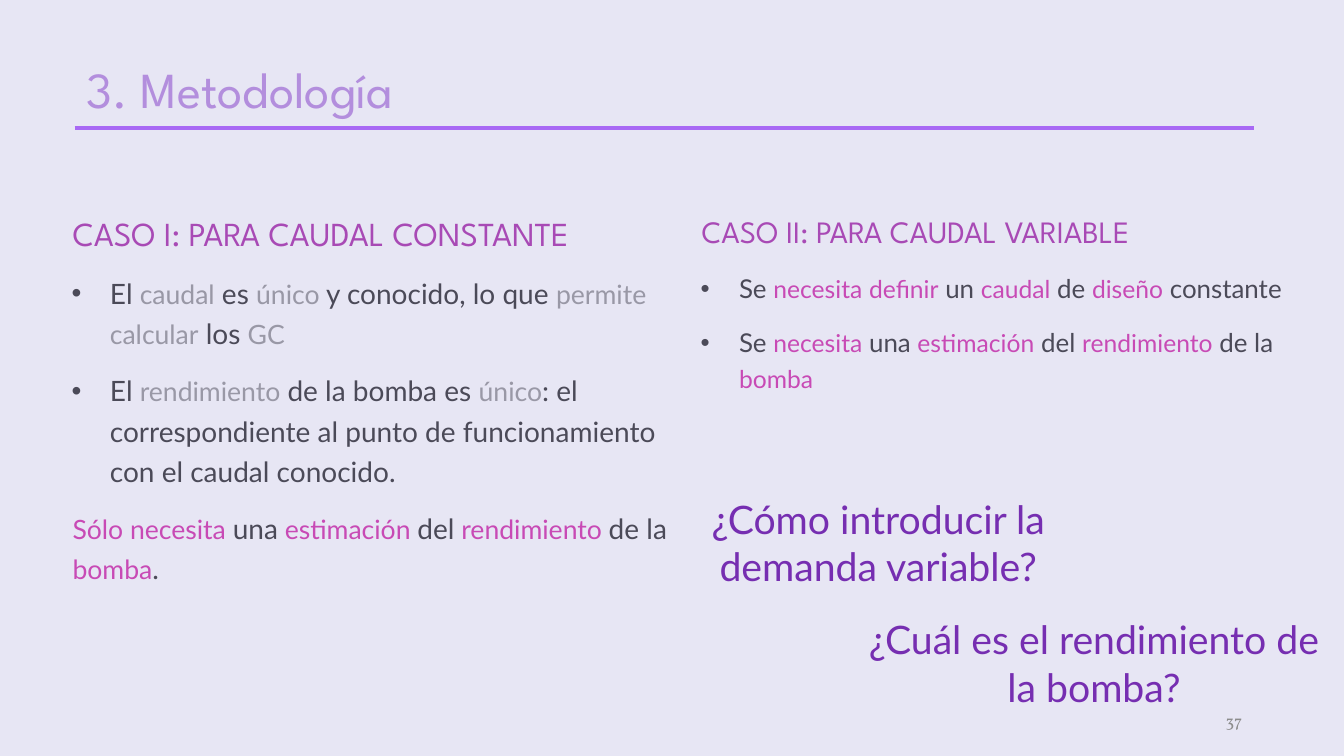
from lxml import etree
from pptx import Presentation
from pptx import util as u
from pptx.dml.color import RGBColor
from pptx.enum import shapes, text
from pptx.oxml.ns import qn

COLORS = {
    "title": "AA70DA", "heading": "990099", "text": "000000",
    "muted": "808080", "accent": "CC0099", "rule": "9933FF",
    "veil": "C2BFE3", "question": "762EB1", "number": "8C8C8C",
}
SANS, DISPLAY, SERIF = "Lato", "League Spartan", "Vollkorn"


class SlideBuilder:
    def __init__(self, prs):
        self.slide = prs.slides.add_slide(prs.slide_layouts[3])

    def color(self, name):
        return RGBColor.from_string(COLORS[name])

    def place(self, sp, box):
        sp.left, sp.top, sp.width, sp.height = map(u.Inches, box)

    def style(self, r, font, size, color):
        r.font.name = font
        r.font.size = u.Pt(size)
        r.font.color.rgb = self.color(color)

    def title(self, words, box):
        sp = self.slide.shapes.title
        self.place(sp, box)
        tf = sp.text_frame
        tf.text = words
        tf.auto_size = text.MSO_AUTO_SIZE.NONE
        tf.vertical_anchor = text.MSO_ANCHOR.MIDDLE
        p = tf.paragraphs[0]
        p.alignment = text.PP_ALIGN.LEFT
        p.line_spacing = 0.9
        self.style(p.runs[0], DISPLAY, 36, "title")

    def indent(self, p, bullet):
        pPr = p._p.get_or_add_pPr()
        pPr.set("marL", str(u.Inches(0.47 if bullet else 0.1)))
        pPr.set("indent", str(u.Inches(-0.38 if bullet else 0)))
        bu = etree.SubElement(pPr, qn("a:buChar" if bullet else "a:buNone"))
        if bullet:
            bu.set("char", "•")

    def case(self, idx, box, heading, items, sizes):
        heading_size, text_size, mark_size = sizes
        sp = self.slide.placeholders[idx]
        self.place(sp, box)
        tf = sp.text_frame
        tf.auto_size = text.MSO_AUTO_SIZE.NONE
        tf.margin_top = u.Inches(0.12)
        tf.text = heading
        p = tf.paragraphs[0]
        self.indent(p, False)
        p.space_before = u.Pt(0)
        p.line_spacing = 1.1
        self.style(p.runs[0], DISPLAY, heading_size, "heading")
        for words, mark_color, bullet in items:
            p = tf.add_paragraph()
            self.indent(p, bullet)
            p.space_before = u.Pt(12)
            p.line_spacing = 1.2
            for i, part in enumerate(words.split("*")):
                if part:
                    r = p.add_run()
                    r.text = part
                    if i % 2:
                        self.style(r, SANS, mark_size, mark_color)
                    else:
                        self.style(r, SANS, text_size, "text")

    def rule(self, x1, x2, y):
        line = self.slide.shapes.add_connector(
            shapes.MSO_CONNECTOR.STRAIGHT,
            u.Inches(x1), u.Inches(y), u.Inches(x2), u.Inches(y))
        line.line.color.rgb = self.color("rule")
        line.line.width = u.Pt(2.25)
        etree.SubElement(line._element.spPr, qn("a:effectLst"))

    def veil(self, width, height, opacity):
        sp = self.slide.shapes.add_shape(
            shapes.MSO_SHAPE.RECTANGLE, 0, 0, width, height)
        sp.shadow.inherit = False
        sp.fill.solid()
        sp.fill.fore_color.rgb = self.color("veil")
        sp.line.fill.background()
        srgb = sp._element.spPr.find(".//" + qn("a:srgbClr"))
        etree.SubElement(srgb, qn("a:alpha")).set("val", str(opacity * 1000))

    def label(self, words, box, font, size, color, align, anchor):
        sp = self.slide.shapes.add_textbox(*map(u.Inches, box))
        tf = sp.text_frame
        tf.word_wrap = True
        tf.vertical_anchor = anchor
        tf.text = words
        p = tf.paragraphs[0]
        p.alignment = align
        self.style(p.runs[0], font, size, color)


def main():
    prs = Presentation()
    prs.slide_width, prs.slide_height = u.Inches(13.33), u.Inches(7.5)
    s = SlideBuilder(prs)
    s.title("3. Metodología", (0.76, 0.19, 11.5, 1.45))
    s.case(1, (0.52, 1.95, 6.23, 3.96), "CASO I: PARA CAUDAL CONSTANTE", [
        ("El *caudal* es *único* y conocido, lo que *permite* *calcular* los *GC*",
         "muted", True),
        ("El *rendimiento* de la bomba es *único*: el correspondiente al punto "
         "de funcionamiento con el caudal conocido.", "muted", True),
        ("*Sólo necesita *una* estimación *del* rendimiento *de la *bomba*.",
         "accent", False),
    ], (24, 20, 19))
    s.case(2, (6.76, 1.95, 6.39, 2.01), "CASO II: PARA CAUDAL VARIABLE", [
        ("Se *necesita* *definir* un *caudal* de *diseño* constante",
         "accent", True),
        ("Se *necesita* una *estimación* del *rendimiento* de la *bomba*",
         "accent", True),
    ], (22.2, 18.5, 17.6))
    s.rule(0.74, 12.44, 1.27)
    s.veil(prs.slide_width, prs.slide_height, 39)
    for words, left, top in (
        ("¿Cómo introducir la demanda variable?", 6.37, 4.86),
        ("¿Cuál es el rendimiento de la bomba?", 8.51, 6.06),
    ):
        s.label(words, (left, top, 4.68, 1.04), SANS, 28, "question",
                text.PP_ALIGN.CENTER, text.MSO_ANCHOR.TOP)
    s.label("37", (9.42, 6.95, 3, 0.4), SERIF, 12, "number",
            text.PP_ALIGN.RIGHT, text.MSO_ANCHOR.MIDDLE)
    prs.save("out.pptx")


if __name__ == "__main__":
    main()
